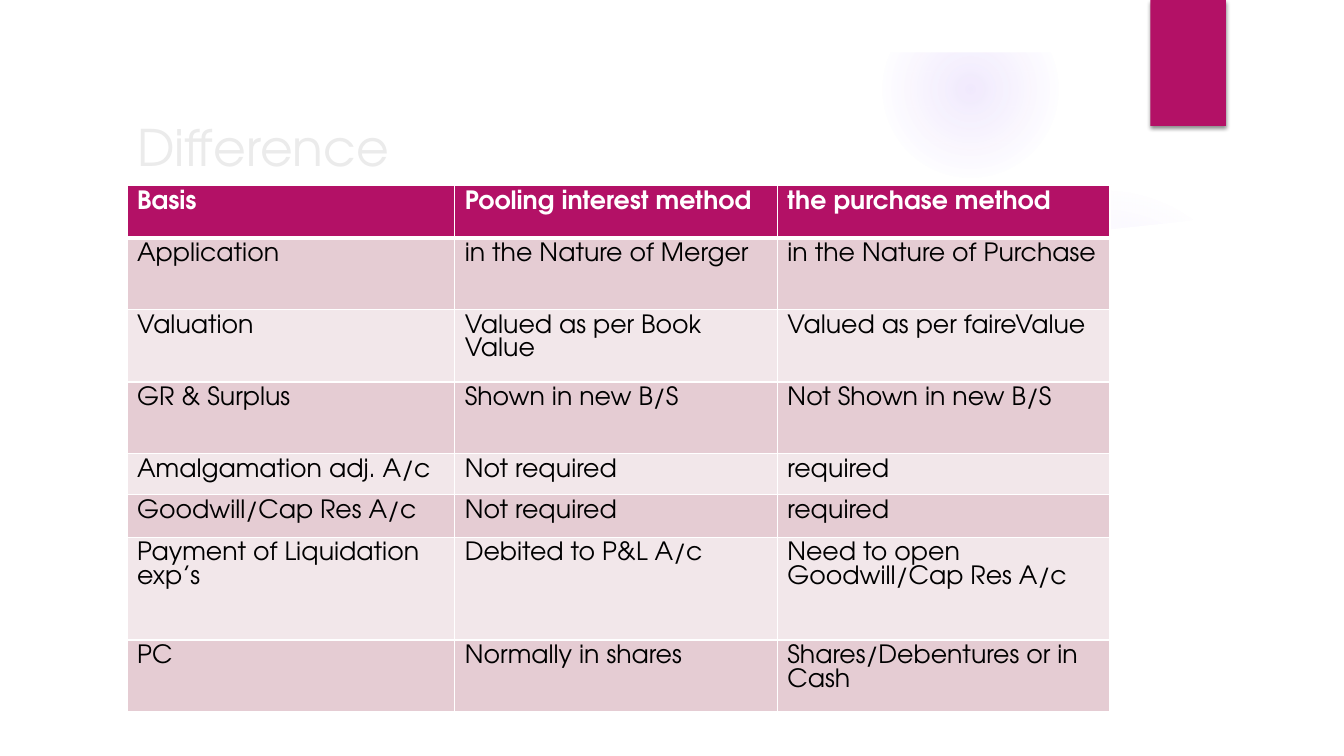
from lxml.etree import SubElement
from pptx import Presentation
from pptx.dml.color import RGBColor
from pptx.enum.shapes import MSO_SHAPE
from pptx.enum.text import MSO_ANCHOR, PP_ALIGN
from pptx.oxml import parse_xml
from pptx.oxml.ns import nsdecls, qn
from pptx.util import Inches, Pt

FONT = "TeX Gyre Adventor"
PINK, WHITE = "B31166", "FFFFFF"
BANDS = ["E5CCD3", "F2E7EA"]
COLS = [3.25, 3.2, 3.3]
ROWS = [0.52, 0.71, 0.72, 0.71, 0.41, 0.42, 1.02, 0.71]
CELLS = [
    ["Basis", "Pooling interest method", "the purchase method"],
    ["Application", "in the Nature of Merger", "in the Nature of Purchase"],
    ["Valuation", "Valued as per Book Value", "Valued as per faireValue"],
    ["GR & Surplus", "Shown in new B/S", "Not Shown in new B/S"],
    ["Amalgamation adj. A/c", "Not required", "required"],
    ["Goodwill/Cap Res A/c", "Not required", "required"],
    ["Payment of Liquidation exp’s", "Debited to P&L A/c",
     "Need to open Goodwill/Cap Res A/c"],
    ["PC", "Normally in shares", "Shares/Debentures or in Cash"],
]
# Wavy top edge of the white panel, right to left
WAVE = [(12.84, 2.04), (11.72, 2.2), (10.6, 2.32), (9.49, 2.41), (8.4, 2.46),
        (7.08, 2.48), (5.11, 2.44), (3.6, 2.36), (1.87, 2.21), (0.5, 2.04)]


def color(code):
    return RGBColor.from_string(code)


def paint(shape, code):
    shape.shadow.inherit = False
    shape.line.fill.background()
    shape.fill.solid()
    shape.fill.fore_color.rgb = color(code)


def add_box(slide, kind, left, top, width, height, code):
    shape = slide.shapes.add_shape(
        kind, Inches(left), Inches(top), Inches(width), Inches(height))
    paint(shape, code)
    return shape


def add_glow(slide, left, top, size, stops):
    shape = add_box(slide, MSO_SHAPE.OVAL, left, top, size, size, WHITE)
    marks = "".join(
        f'<a:gs pos="{pos * 1000}"><a:srgbClr val="9B6BF2">'
        f'<a:alpha val="{alpha * 1000}"/></a:srgbClr></a:gs>'
        for pos, alpha in stops)
    grad = parse_xml(
        f'<a:gradFill {nsdecls("a")}><a:gsLst>{marks}</a:gsLst>'
        '<a:path path="circle"><a:fillToRect l="50000" t="50000" '
        'r="50000" b="50000"/></a:path></a:gradFill>')
    props = shape.element.spPr
    props.replace(props.find(qn("a:solidFill")), grad)


def add_panel(slide):
    start, *rest = [(Inches(x), Inches(y)) for x, y in WAVE]
    form = slide.shapes.build_freeform(*start)
    foot = [(Inches(0.5), Inches(7)), (Inches(12.84), Inches(7))]
    form.add_line_segments(rest + foot, close=True)
    paint(form.convert_to_shape(), WHITE)


def add_tab(slide):
    tab = add_box(slide, MSO_SHAPE.RECTANGLE, 11.41, 0, 0.75, 1.25, PINK)
    effects = tab.element.spPr.find(qn("a:effectLst"))
    effects.append(parse_xml(
        f'<a:outerShdw {nsdecls("a")} blurRad="{Pt(3)}" dist="{Pt(2)}" '
        'dir="5400000" rotWithShape="0"><a:srgbClr val="000000">'
        '<a:alpha val="45000"/></a:srgbClr></a:outerShdw>'))


def add_run(para, text, size, code, bold=False):
    run = para.add_run()
    run.text = text
    font = run.font
    font.name, font.size, font.bold = FONT, Pt(size), bold
    font.color.rgb = color(code)


def set_title(slide, text):
    title = slide.shapes.title
    title.left, title.top = Inches(1.26), Inches(1.07)
    title.width, title.height = Inches(9.58), Inches(0.77)
    title.text_frame.vertical_anchor = MSO_ANCHOR.MIDDLE
    para = title.text_frame.paragraphs[0]
    para.alignment = PP_ALIGN.LEFT
    add_run(para, text, 36, "EBEBEB")


def set_edges(cell, widths):
    props = cell._tc.get_or_add_tcPr()
    for at, (side, width) in enumerate(widths.items()):
        line = parse_xml(
            f'<a:ln{side} {nsdecls("a")} w="{Pt(width)}"/>')
        fill = SubElement(line, qn("a:solidFill"))
        SubElement(fill, qn("a:srgbClr")).set("val", WHITE)
        props.insert(at, line)


def add_grid(slide):
    frame = slide.shapes.add_table(
        len(ROWS), len(COLS), Inches(1.26), Inches(1.84),
        Inches(sum(COLS)), Inches(sum(ROWS)))
    table = frame.table
    for col, width in zip(table.columns, COLS):
        col.width = Inches(width)
    for r, (row, height) in enumerate(zip(table.rows, ROWS)):
        row.height = Inches(height)
        head = r == 0
        for cell, text in zip(row.cells, CELLS[r]):
            cell.fill.solid()
            cell.fill.fore_color.rgb = color(
                PINK if head else BANDS[(r - 1) % 2])
            set_edges(cell, {"L": 1, "R": 1, "T": 3 if r == 1 else 1,
                             "B": 3 if head else 1})
            para = cell.text_frame.paragraphs[0]
            add_run(para, text, 18, WHITE if head else "000000", head)


def main():
    deck = Presentation()
    deck.slide_width, deck.slide_height = Inches(13.33), Inches(7.5)
    slide = deck.slides.add_slide(deck.slide_layouts[5])
    # Backdrop: soft glows, trimmed by white areas
    add_glow(slide, 9.41, 1.83, 3.08, [(0, 7), (36, 6), (69, 0)])
    add_glow(slide, 8.75, 0.01, 1.75, [(0, 14), (36, 7), (73, 0)])
    add_panel(slide)
    add_box(slide, MSO_SHAPE.RECTANGLE, 0, 0, 13.33, 0.52, WHITE)
    add_tab(slide)
    # Content
    set_title(slide, "Difference")
    add_grid(slide)
    deck.save("out.pptx")


if __name__ == "__main__":
    main()
